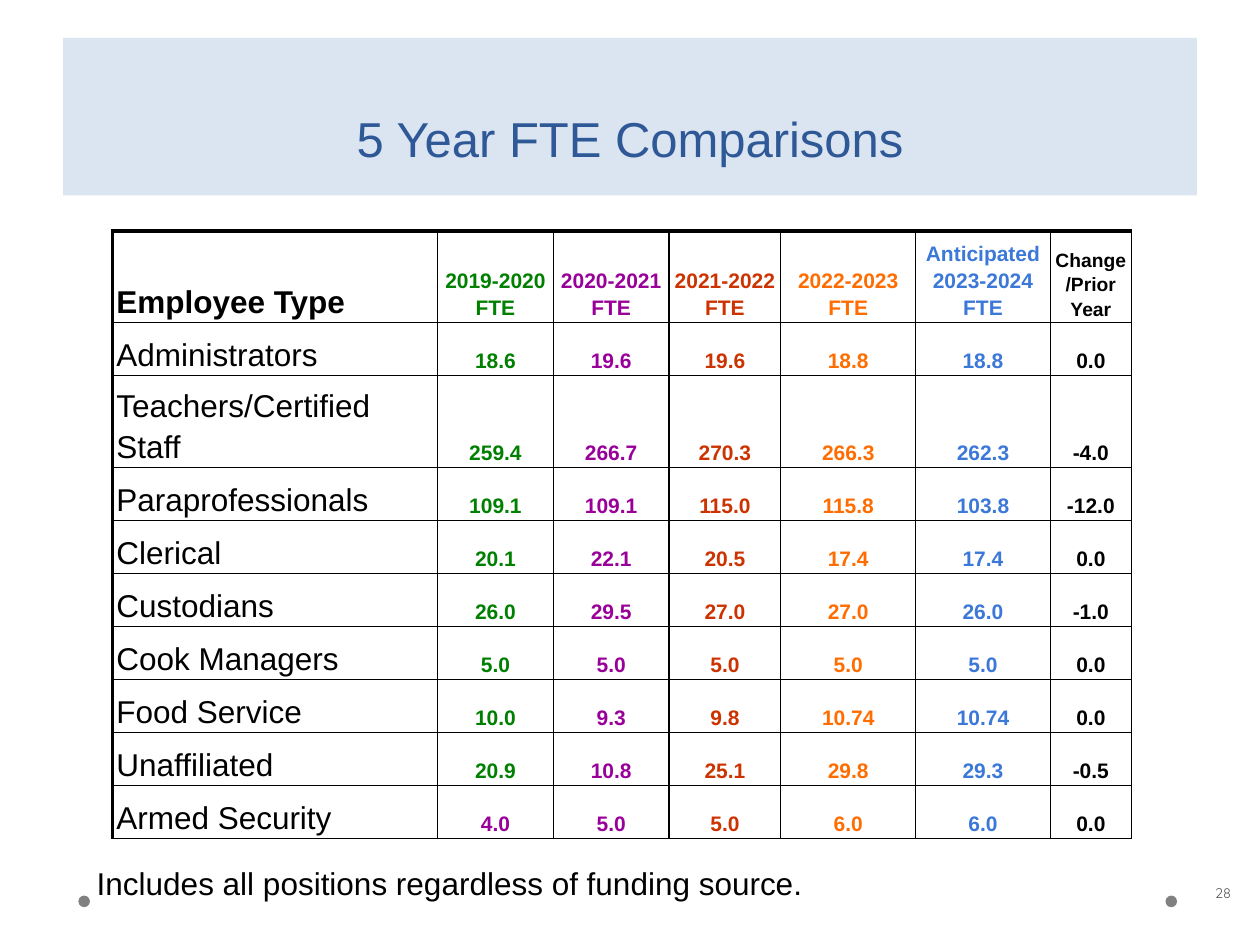
"""Build the five-year FTE comparison slide."""
from lxml import etree
from pptx import Presentation
from pptx.dml.color import RGBColor
from pptx.enum import shapes, text
from pptx.oxml import ns
from pptx.util import Pt

BLACK = RGBColor(0x00, 0x00, 0x00)
GREEN = RGBColor(0x00, 0x80, 0x00)
PURPLE = RGBColor(0x99, 0x00, 0x99)
RED = RGBColor(0xCC, 0x33, 0x00)
ORANGE = RGBColor(0xFF, 0x6D, 0x01)
BLUE = RGBColor(0x3C, 0x78, 0xD8)
NAVY = RGBColor(0x2F, 0x58, 0x97)
PALE_BLUE = RGBColor(0xDA, 0xE5, 0xF1)
GRAY = RGBColor(0x80, 0x80, 0x80)
DARK_GRAY = RGBColor(0x59, 0x59, 0x59)

TITLE = "5 Year FTE Comparisons"
NOTE = "Includes all positions regardless of funding source."
PAGE_NUMBER = "28"
COLUMNS = [
    ("Employee Type", 185.6, BLACK),
    ("2019-2020 FTE", 66.3, GREEN),
    ("2020-2021 FTE", 66, PURPLE),
    ("2021-2022 FTE", 64, RED),
    ("2022-2023 FTE", 77, ORANGE),
    ("Anticipated 2023-2024 FTE", 77, BLUE),
    ("Change/Prior Year", 46.3, BLACK),
]
STAFF = [
    ("Administrators", "18.6", "19.6", "19.6", "18.8", "18.8", "0.0"),
    ("Teachers/Certified Staff", "259.4", "266.7", "270.3", "266.3", "262.3", "-4.0"),
    ("Paraprofessionals", "109.1", "109.1", "115.0", "115.8", "103.8", "-12.0"),
    ("Clerical", "20.1", "22.1", "20.5", "17.4", "17.4", "0.0"),
    ("Custodians", "26.0", "29.5", "27.0", "27.0", "26.0", "-1.0"),
    ("Cook Managers", "5.0", "5.0", "5.0", "5.0", "5.0", "0.0"),
    ("Food Service", "10.0", "9.3", "9.8", "10.74", "10.74", "0.0"),
    ("Unaffiliated", "20.9", "10.8", "25.1", "29.8", "29.3", "-0.5"),
    ("Armed Security", "4.0", "5.0", "5.0", "6.0", "6.0", "0.0"),
]
HEADER_HEIGHT, ROW_HEIGHT = 38.2, 30.3
THICK, THIN = 2.25, 0.75


def place(shape, left, top, width, height):
    shape.left, shape.top = Pt(left), Pt(top)
    shape.width, shape.height = Pt(width), Pt(height)


def write(frame, words, size, color, align, font="Arial", bold=False):
    frame.text = words
    para = frame.paragraphs[0]
    para.alignment = align
    span = para.runs[0].font
    span.name, span.size, span.bold = font, Pt(size), bold
    span.color.rgb = color
    return para


def add_borders(cell, widths):
    properties = cell._tc.get_or_add_tcPr()
    for position, (side, width) in enumerate(widths.items()):
        line = etree.Element(ns.qn(f"a:ln{side}"), w=str(Pt(width)))
        fill = etree.SubElement(line, ns.qn("a:solidFill"))
        etree.SubElement(fill, ns.qn("a:srgbClr"), val=str(BLACK))
        properties.insert(position, line)


def add_label(page, bounds, words, size, color, align, font="Arial"):
    box = page.shapes.add_textbox(*map(Pt, bounds))
    frame = box.text_frame
    frame.word_wrap = True
    frame.margin_left = frame.margin_right = Pt(7.2)
    frame.margin_top = frame.margin_bottom = Pt(7.2)
    write(frame, words, size, color, align, font)
    return frame


def add_title(page):
    title = page.shapes.title
    place(title, 36, 21.6, 648, 90)
    title.fill.solid()
    title.fill.fore_color.rgb = PALE_BLUE
    frame = title.text_frame
    frame.auto_size = text.MSO_AUTO_SIZE.NONE
    frame.vertical_anchor = text.MSO_ANCHOR.MIDDLE
    para = write(frame, TITLE, 28, NAVY, text.PP_ALIGN.CENTER)
    para.line_spacing = Pt(58)


def add_staff_table(page):
    rows = [tuple(name for name, _, _ in COLUMNS)] + STAFF
    total_width = sum(width for _, width, _ in COLUMNS)
    total_height = HEADER_HEIGHT + ROW_HEIGHT * len(STAFF)
    table = page.shapes.add_table(
        len(rows), len(COLUMNS), Pt(64.4), Pt(132), Pt(total_width), Pt(total_height)
    ).table
    table.first_row = table.horz_banding = False
    for column, (_, width, _) in zip(table.columns, COLUMNS):
        column.width = Pt(width)
    for r, values in enumerate(rows):
        table.rows[r].height = Pt(ROW_HEIGHT if r else HEADER_HEIGHT)
        for c, value in enumerate(values):
            cell = table.cell(r, c)
            cell.fill.background()
            cell.vertical_anchor = text.MSO_ANCHOR.BOTTOM
            cell.margin_left = cell.margin_right = Pt(2.1)
            cell.margin_top = cell.margin_bottom = Pt(1.4)
            size = 18 if c == 0 else 11 if (r, c) == (0, 6) else 12
            color = PURPLE if (value, c) == ("4.0", 1) else COLUMNS[c][2]
            align = text.PP_ALIGN.CENTER if c else text.PP_ALIGN.LEFT
            para = write(cell.text_frame, value, size, color, align, bold=r == 0 or c > 0)
            para.line_spacing = 1.15
            add_borders(cell, {"L": THIN if c else THICK, "R": THIN,
                               "T": THIN if r else THICK, "B": THIN})


def main():
    deck = Presentation()
    deck.slide_width, deck.slide_height = Pt(720), Pt(540)
    page = deck.slides.add_slide(deck.slide_layouts[5])
    for left in (666, 44.8):
        dot = page.shapes.add_shape(
            shapes.MSO_SHAPE.OVAL, Pt(left), Pt(511.8), Pt(6.6), Pt(6.6))
        dot.shadow.inherit = False
        dot.fill.solid()
        dot.fill.fore_color.rgb = GRAY
        dot.line.fill.background()
    number = add_label(page, (667.4, 489.6, 43.2, 41), PAGE_NUMBER, 8, DARK_GRAY,
                       text.PP_ALIGN.RIGHT, "Quicksand")
    number.vertical_anchor = text.MSO_ANCHOR.MIDDLE
    add_title(page)
    add_staff_table(page)
    add_label(page, (48.2, 486.7, 598.3, 31.7), NOTE, 18, BLACK, text.PP_ALIGN.LEFT)
    deck.save("out.pptx")


if __name__ == "__main__":
    main()
